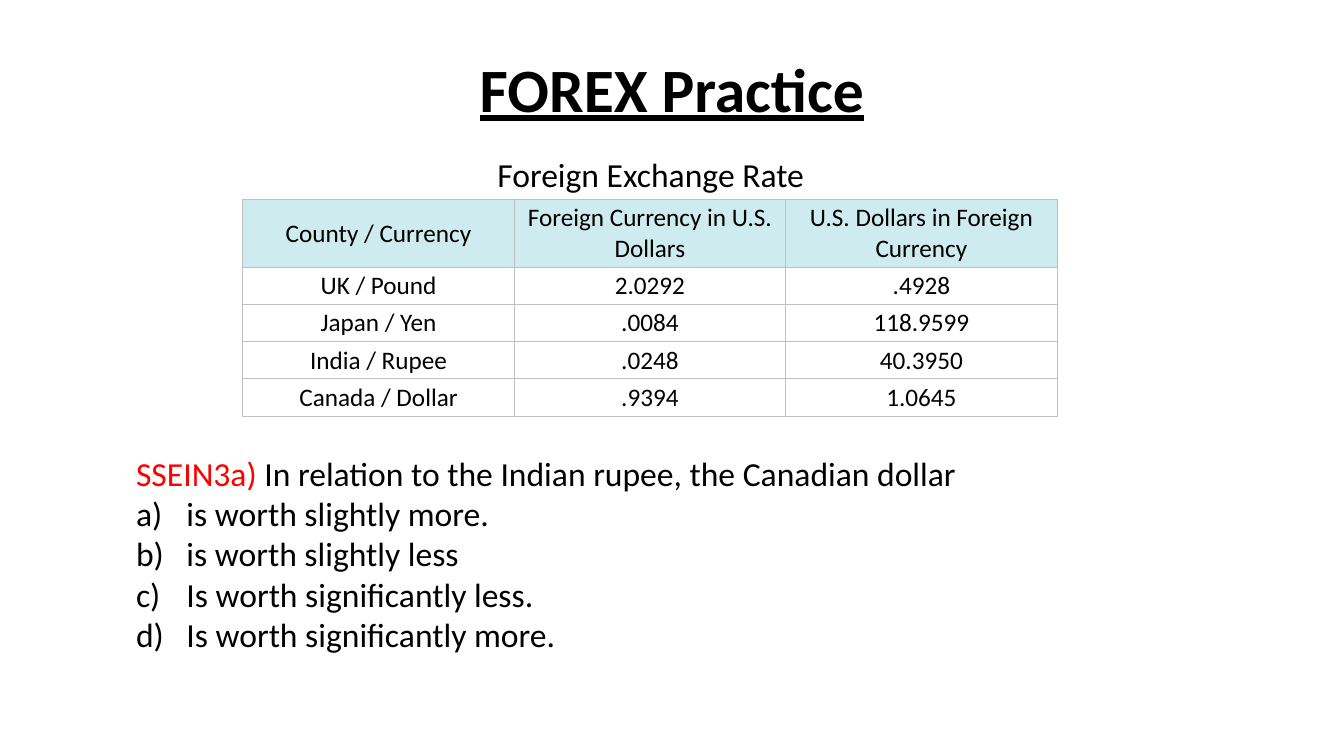
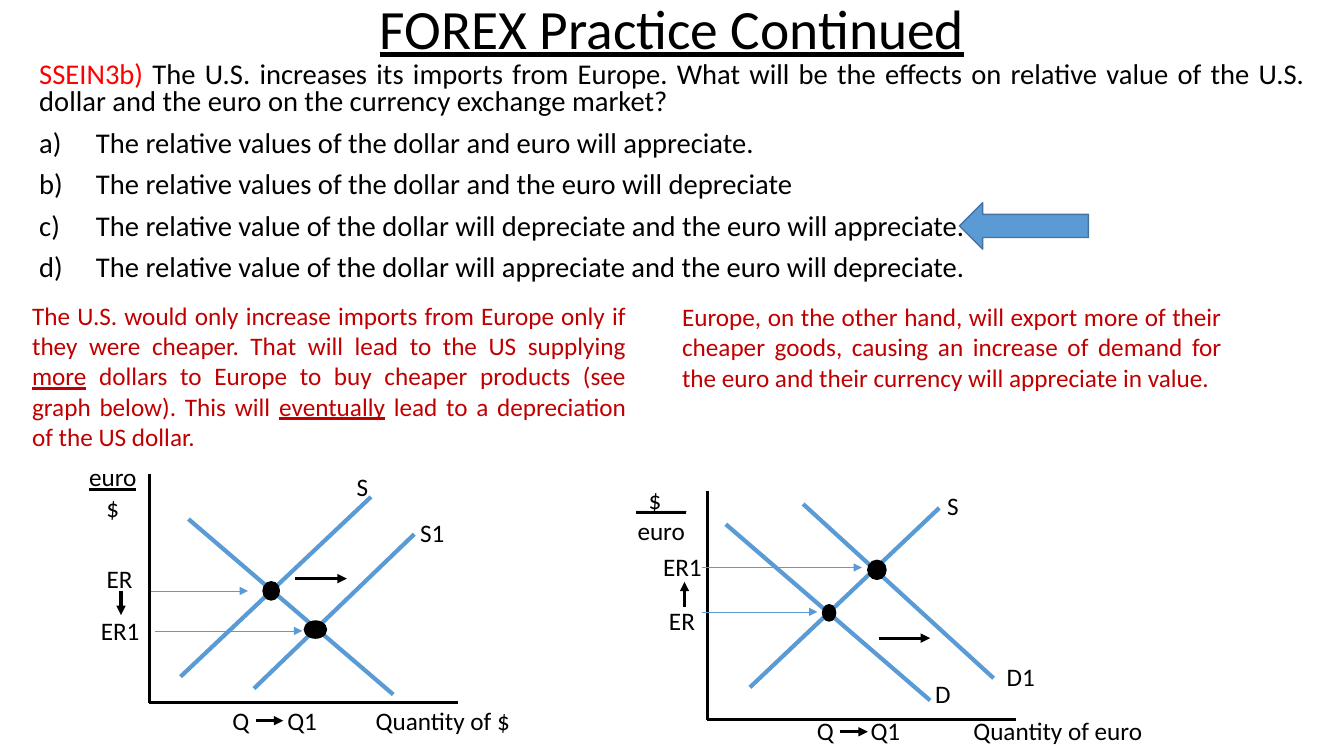
from dataclasses import dataclass

from lxml import etree
from pptx import Presentation
from pptx.dml.color import RGBColor
from pptx.enum.shapes import MSO_CONNECTOR, MSO_SHAPE
from pptx.enum.text import MSO_ANCHOR, MSO_AUTO_SIZE, PP_ALIGN
from pptx.oxml.ns import qn
from pptx.util import Cm, Pt

STRAIGHT = MSO_CONNECTOR.STRAIGHT
ELLIPSE, LEFT_ARROW = MSO_SHAPE.OVAL, MSO_SHAPE.LEFT_ARROW
MIDDLE = MSO_ANCHOR.MIDDLE
NO_FIT = MSO_AUTO_SIZE.NONE
LEFT, CENTER, JUSTIFY = PP_ALIGN.LEFT, PP_ALIGN.CENTER, PP_ALIGN.JUSTIFY
TITLE_ONLY = 5


@dataclass(frozen=True)
class Theme:
    """Colours, font and type sizes shared by the slides."""

    font: str = "Calibri"
    ink: str = "000000"
    paper: str = "FFFFFF"
    standard: str = "FF0000"
    explanation: str = "C00000"
    accent: str = "5B9BD5"
    accent_edge: str = "43739E"
    header: str = "CEEBF0"
    grid: str = "C0C0C0"
    title_size: float = 44
    long_title_size: float = 39.6
    question_size: float = 24
    long_question_size: float = 20.4
    text_size: float = 18


THEME = Theme()
AXIS = {"color": THEME.ink, "width": 2.25}
CURVE = {"color": THEME.accent, "width": 3}
SHIFT = {"color": THEME.ink, "width": 2.25, "arrow": True}
GUIDE = {"color": THEME.accent, "width": 0.5, "arrow": True}

RATES = [
    ("County / Currency", "Foreign Currency in U.S. Dollars", "U.S. Dollars in Foreign Currency"),
    ("UK / Pound", "2.0292", ".4928"),
    ("Japan / Yen", ".0084", "118.9599"),
    ("India / Rupee", ".0248", "40.3950"),
    ("Canada / Dollar", ".9394", "1.0645"),
]

DOLLAR_MARKET = {
    "curves": [(0.79, 5.11, 5.59, 0.58), (6.68, 1.52, 2.64, 5.41), (0.99, 1.14, 6.15, 5.56)],
    "shifts": [(3.68, 2.64, 4.98, 2.64), (-0.71, 2.95, -0.71, 3.56), (2.69, 6.22, 3.38, 6.22)],
    "guides": [(0.05, 2.95, 2.49, 2.95), (0.15, 3.96, 3.86, 3.96)],
    "labels": [
        ("S", 4.98, -0.2, 0.89), ("S1", 6.58, 0.97, 1.65),
        ("ER", -1.32, 2.13, 1.32), ("ER1", -1.47, 3.45, 1.57),
        ("Q", 1.85, 5.72, 1.17), ("Q1", 3.23, 5.72, 1.3),
        ("Quantity of $", 5.46, 5.72, 3.99),
    ],
    "ratio": ("euro", "$", -1.93, -0.43),
    "equilibria": [(2.87, 2.72, 0.41, 0.46), (3.91, 3.71, 0.56, 0.43)],
}
EURO_MARKET = {
    "curves": [(0.46, 0.84, 5.61, 5.28), (2.41, 0.33, 7.21, 4.72), (1.07, 4.95, 5.84, 0.43)],
    "shifts": [(4.32, 3.71, 5.61, 3.71), (-0.58, 2.92, -0.58, 2.29), (3.33, 6.07, 4.04, 6.07)],
    "guides": [(-0.15, 3.05, 2.77, 3.05), (-0.15, 1.93, 3.89, 1.93)],
    "labels": [
        ("S", 5.79, -0.15, 0.89), ("D", 5.49, 4.6, 0.89), ("D1", 7.29, 4.17, 1.32),
        ("ER", -1.22, 2.77, 1.32), ("ER1", -1.37, 1.4, 1.57),
        ("Q", 2.51, 5.54, 1.17), ("Q1", 3.86, 5.54, 1.3),
        ("Quantity of euro", 6.45, 5.54, 6.35),
    ],
    "ratio": ("_$__", "euro", -2.18, -0.28),
    "equilibria": [(4.04, 1.75, 0.46, 0.48), (2.9, 2.87, 0.33, 0.41)],
}


def apply_format(target, values):
    """Set each named attribute of the target."""
    for name, value in values.items():
        setattr(target, name, value)


def cm_box(box):
    """Turn centimetre numbers into lengths."""
    return [Cm(value) for value in box]


def write_paragraph(paragraph, runs, size, color=THEME.ink, **layout):
    """Fill a paragraph with (text, font values, colour) runs."""
    apply_format(paragraph, layout)
    for text, values, run_color in runs:
        run = paragraph.add_run()
        run.text = text
        apply_format(run.font, {"name": THEME.font, "size": Pt(size), **values})
        run.font.color.rgb = RGBColor.from_string(run_color or color)


def plain(text):
    """Return a single run without special formatting."""
    return [(text, {}, None)]


def add_text(slide, box, paragraphs, size, color=THEME.ink, **layout):
    """Add a wrapping text box with one entry per paragraph."""
    frame = slide.shapes.add_textbox(*cm_box(box)).text_frame
    frame.word_wrap = True
    for index, runs in enumerate(paragraphs):
        paragraph = frame.add_paragraph() if index else frame.paragraphs[0]
        write_paragraph(paragraph, runs, size, color, **layout)
    return frame


def add_title(slide, box, text, size, **emphasis):
    """Place and format the title placeholder."""
    title = slide.shapes.title
    apply_format(title, dict(zip(("left", "top", "width", "height"), cm_box(box))))
    apply_format(title.text_frame,
                 {"word_wrap": True, "auto_size": NO_FIT, "vertical_anchor": MIDDLE})
    write_paragraph(title.text_frame.paragraphs[0], [(text, {"underline": True, **emphasis}, None)],
                    size, alignment=CENTER, line_spacing=0.9)


def add_question(slide, box, code, question, answers, size, indent, **layout):
    """Add a coded question followed by lettered answers."""
    lead = [(code + " ", {}, THEME.standard), (question, {}, None)]
    frame = add_text(slide, box, [lead, *map(plain, answers)], size, **layout)
    for paragraph in frame.paragraphs[1:]:
        properties = paragraph._p.get_or_add_pPr()
        properties.set("marL", str(Cm(indent)))
        properties.set("indent", str(-Cm(indent)))
        etree.SubElement(properties, qn("a:buFont")).set("typeface", "+mj-lt")
        etree.SubElement(properties, qn("a:buAutoNum")).set("type", "alphaLcParenR")


def add_line(slide, ends, color, width, arrow=False):
    """Draw a straight line, with an arrowhead at its end if asked."""
    line = slide.shapes.add_connector(STRAIGHT, *cm_box(ends))
    line.line.width = Pt(width)
    line.line.color.rgb = RGBColor.from_string(color)
    if arrow:
        etree.SubElement(line.line._get_or_add_ln(), qn("a:tailEnd")).set("type", "triangle")
    etree.SubElement(line._element.spPr, qn("a:effectLst"))


def add_solid(slide, kind, box, fill, edge):
    """Add a filled preset shape."""
    solid = slide.shapes.add_shape(kind, *cm_box(box))
    solid.shadow.inherit = False
    solid.fill.solid()
    solid.fill.fore_color.rgb = RGBColor.from_string(fill)
    solid.line.color.rgb = RGBColor.from_string(edge)
    solid.line.width = Pt(1)


def border_cell(cell):
    """Give a cell thin borders on all sides, placed before its fill."""
    properties = cell._tc.get_or_add_tcPr()
    for index, side in enumerate(("a:lnL", "a:lnR", "a:lnT", "a:lnB")):
        border = etree.Element(qn(side), w=str(Pt(0.75)))
        fill = etree.SubElement(border, qn("a:solidFill"))
        etree.SubElement(fill, qn("a:srgbClr")).set("val", THEME.grid)
        properties.insert(index, border)


def add_rate_table(slide, box, rates, header_height):
    """Add the exchange rate table with a tinted header row."""
    table = slide.shapes.add_table(len(rates), len(rates[0]), *cm_box(box)).table
    apply_format(table, {"first_row": False, "horz_banding": False})
    for column in table.columns:
        column.width = Cm(box[2] / len(rates[0]))
    row_height = (box[3] - header_height) / (len(rates) - 1)
    margins = {"margin_" + side: Cm(0.08) for side in ("left", "right", "top", "bottom")}
    for row_index, values in enumerate(rates):
        table.rows[row_index].height = Cm(row_height if row_index else header_height)
        for column_index, value in enumerate(values):
            cell = table.cell(row_index, column_index)
            apply_format(cell, {"vertical_anchor": MIDDLE, **margins})
            cell.fill.solid()
            cell.fill.fore_color.rgb = RGBColor.from_string(
                THEME.paper if row_index else THEME.header)
            border_cell(cell)
            write_paragraph(cell.text_frame.paragraphs[0], plain(value),
                            THEME.text_size, alignment=CENTER)


def add_market_graph(slide, box, market):
    """Draw a currency market graph relative to its axis box."""
    left, top, width, height = box

    def lines(ends_list, style):
        """Draw lines given relative to the axis box."""
        for x1, y1, x2, y2 in ends_list:
            add_line(slide, (left + x1, top + y1, left + x2, top + y2), **style)

    lines([(0, 0, 0, height), (0, height, width, height)], AXIS)
    lines(market["curves"], CURVE)
    lines(market["shifts"], SHIFT)
    lines(market["guides"], GUIDE)
    for text, x, y, label_width in market["labels"]:
        add_text(slide, (left + x, top + y, label_width, 1.02), [plain(text)],
                 THEME.text_size, alignment=LEFT)
    numerator, denominator, x, y = market["ratio"]
    add_text(slide, (left + x, top + y, 2.03, 1.8),
             [[(numerator, {"underline": True}, None)], plain(denominator)],
             THEME.text_size, alignment=CENTER)
    for x, y, dot_width, dot_height in market["equilibria"]:
        add_solid(slide, ELLIPSE, (left + x, top + y, dot_width, dot_height),
                  THEME.ink, THEME.ink)


def build_rates_slide(slide):
    """Build the rate table slide with its question."""
    add_title(slide, (2.33, 0.48, 29.21, 3.68), "FOREX Practice", THEME.title_size, bold=True)
    add_rate_table(slide, (6.12, 5.03, 20.52, 5.36), RATES, 1.65)
    add_text(slide, (7.19, 3.76, 18.42, 1.27), [plain("Foreign Exchange Rate")],
             THEME.question_size, alignment=CENTER)
    add_question(
        slide, (3.18, 11.28, 28.37, 5.38), "SSEIN3a)",
        "In relation to the Indian rupee, the Canadian dollar",
        ["is worth slightly more.", "is worth slightly less",
         "Is worth significantly less.", "Is worth significantly more."],
        THEME.question_size, 1.27)


def build_graphs_slide(slide):
    """Build the question slide with explanations and market graphs."""
    add_title(slide, (2.33, 0, 29.21, 1.57), "FOREX Practice Continued", THEME.long_title_size)
    add_question(
        slide, (0.74, 1.45, 32.39, 6.15), "SSEIN3b)",
        "The U.S. increases its imports from Europe. What will be the effects on relative value "
        "of the U.S. dollar and the euro on the currency exchange market?",
        ["The relative values of the dollar and euro will appreciate.",
         "The relative values of the dollar and the euro will depreciate",
         "The relative value of the dollar will depreciate and the euro will appreciate.",
         "The relative value of the dollar will appreciate and the euro will depreciate."],
        THEME.long_question_size, 1.43,
        alignment=JUSTIFY, line_spacing=0.8, space_before=Pt(10))
    add_solid(slide, LEFT_ARROW, (24.18, 5.11, 3.25, 1.17), THEME.accent, THEME.accent_edge)
    underlined = {"underline": True}
    supply = [
        ("The U.S. would only increase imports from Europe only if they were cheaper. "
         "That will lead to the US supplying ", {}, None),
        ("more", underlined, None),
        (" dollars to Europe to buy cheaper products (see graph below). This will ", {}, None),
        ("eventually", underlined, None),
        (" lead to a depreciation of the US dollar.", {}, None),
    ]
    demand = plain("Europe, on the other hand, will export more of their cheaper goods, causing an "
                   "increase of demand for the euro and their currency will appreciate in value.")
    for box, explanation in (((0.56, 7.44, 15.47, 4.11), supply),
                             ((16.94, 7.47, 14.1, 3.33), demand)):
        add_text(slide, box, [explanation], THEME.text_size, THEME.explanation, alignment=JUSTIFY)
    add_market_graph(slide, (3.76, 11.94, 7.77, 5.77), DOLLAR_MARKET)
    add_market_graph(slide, (17.83, 12.37, 7.77, 5.77), EURO_MARKET)


def main():
    """Build and save the presentation."""
    presentation = Presentation()
    apply_format(presentation, {"slide_width": Cm(33.87), "slide_height": Cm(19.05)})
    for build in (build_rates_slide, build_graphs_slide):
        build(presentation.slides.add_slide(presentation.slide_layouts[TITLE_ONLY]))
    presentation.save("out.pptx")


if __name__ == "__main__":
    main()
